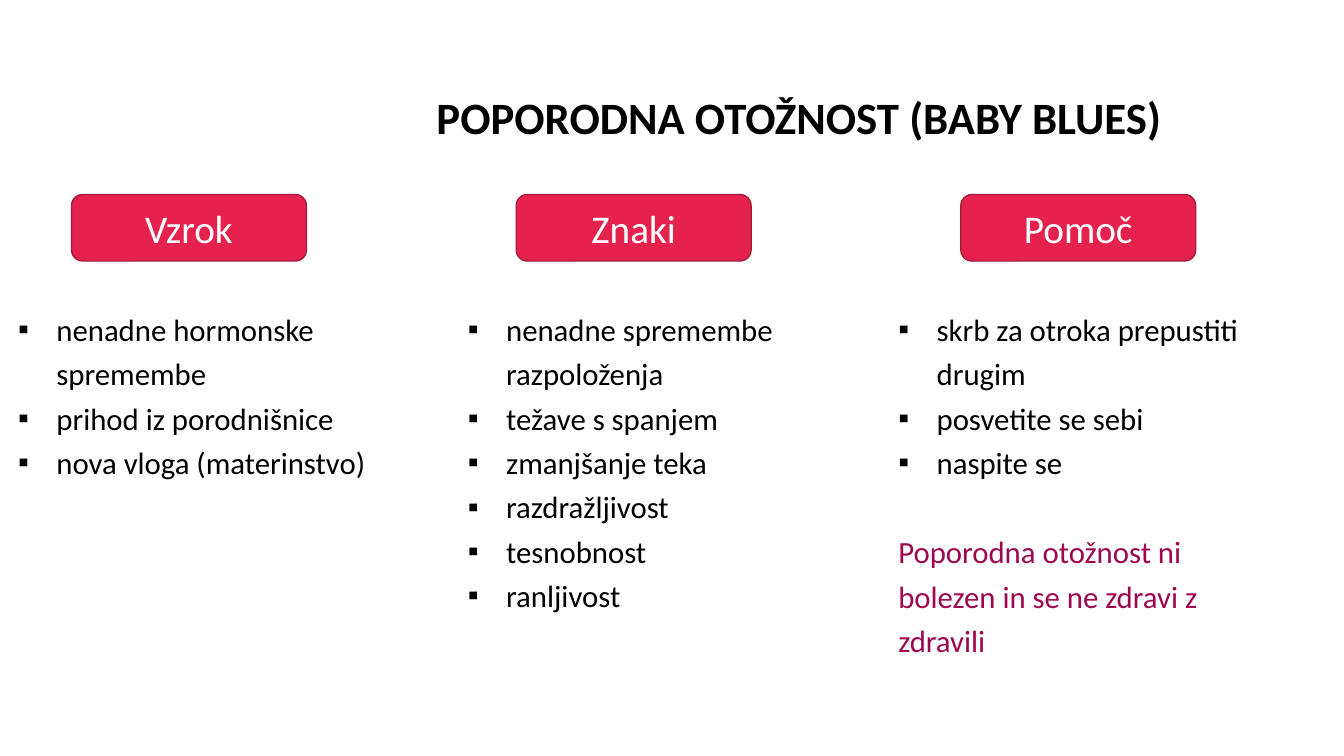
import pptx
import pptx.util
import pptx.dml.color
import pptx.enum.shapes
import pptx.enum.text
import pptx.oxml.ns
import lxml.etree

TITLE = "POPORODNA OTOŽNOST (BABY BLUES)"
COLUMNS = [
    ("Vzrok", 0.08, 3.97, 2.55,
     ["nenadne hormonske spremembe", "prihod iz porodnišnice", "nova vloga (materinstvo)"]),
    ("Znaki", 4.54, 3.78, 3.4,
     ["nenadne spremembe razpoloženja", "težave s spanjem", "zmanjšanje teka",
      "razdražljivost", "tesnobnost", "ranljivost"]),
    ("Pomoč", 8.81, 3.78, 3.62,
     ["skrb za otroka prepustiti drugim", "posvetite se sebi", "naspite se"]),
]
CLOSING = "Poporodna otožnost ni bolezen in se ne zdravi z zdravili"
LIST_SLOTS = (1, 2, 4)
UNUSED_SLOT = 3
LABEL_LEFT, LABEL_STEP, LABEL_TOP = 0.71, 4.41, 1.93
LABEL_WIDTH, LABEL_HEIGHT = 2.33, 0.66
LIST_TOP = 2.96
BULLET_INDENT = 0.38

ALIGN = pptx.enum.text.PP_ALIGN
ANCHOR = pptx.enum.text.MSO_ANCHOR
inches = pptx.util.Inches


def color(value):
    return pptx.dml.color.RGBColor.from_string(value)


def place(shape, left, top, width, height):
    shape.left, shape.top = inches(left), inches(top)
    shape.width, shape.height = inches(width), inches(height)


def prepare(shape, anchor):
    frame = shape.text_frame
    frame.word_wrap = True
    frame.auto_size = pptx.enum.text.MSO_AUTO_SIZE.NONE
    frame.vertical_anchor = anchor
    return frame


def set_bullet(para, bullet):
    indent = inches(BULLET_INDENT) if bullet else 0
    props = para._p.get_or_add_pPr()
    props.set("marL", str(indent))
    props.set("indent", str(-indent))
    qn = pptx.oxml.ns.qn
    if bullet:
        lxml.etree.SubElement(props, qn("a:buFont")).set("typeface", "Arial")
        lxml.etree.SubElement(props, qn("a:buChar")).set("char", bullet)
    else:
        lxml.etree.SubElement(props, qn("a:buNone"))


def write(frame, text, size=22, ink="000000", bold=False, align=ALIGN.LEFT,
          spacing=1.0, before=0, bullet=None):
    para = frame.paragraphs[0]
    if para.runs:
        para = frame.add_paragraph()
    set_bullet(para, bullet)
    para.alignment = align
    para.line_spacing = spacing
    para.space_before = pptx.util.Pt(before)
    para.space_after = pptx.util.Pt(0)
    span = para.add_run()
    span.text = text
    span.font.name = "Calibri"
    span.font.size = pptx.util.Pt(size)
    span.font.bold = bold
    span.font.color.rgb = color(ink)


def add_label(page, text, left):
    label = page.shapes.add_shape(
        pptx.enum.shapes.MSO_SHAPE.ROUNDED_RECTANGLE, inches(left), inches(LABEL_TOP),
        inches(LABEL_WIDTH), inches(LABEL_HEIGHT))
    label.shadow.inherit = False
    label.fill.solid()
    label.fill.fore_color.rgb = color("E5224E")
    label.line.color.rgb = color("A9193A")
    label.line.width = pptx.util.Pt(1)
    write(prepare(label, ANCHOR.MIDDLE), text, size=28, ink="FFFFFF", align=ALIGN.CENTER)


def main():
    deck = pptx.Presentation()
    deck.slide_width, deck.slide_height = inches(13.33), inches(7.5)
    page = deck.slides.add_slide(deck.slide_layouts[4])
    slots = {slot.placeholder_format.idx: slot for slot in page.placeholders}
    unused = slots[UNUSED_SLOT].element
    unused.getparent().remove(unused)

    title = page.shapes.title
    place(title, 2.48, 0.83, 9.14, 0.73)
    write(prepare(title, ANCHOR.MIDDLE), TITLE, size=32, bold=True,
          align=ALIGN.RIGHT, spacing=0.9)

    for number, (heading, left, width, height, items) in enumerate(COLUMNS):
        box = slots[LIST_SLOTS[number]]
        place(box, left, LIST_TOP, width, height)
        frame = prepare(box, ANCHOR.TOP)
        for item in items:
            write(frame, item, spacing=1.2, bullet="▪")
        add_label(page, heading, LABEL_LEFT + number * LABEL_STEP)
    write(frame, CLOSING, ink="9D074E", spacing=1.2, before=32)

    deck.save("out.pptx")


if __name__ == "__main__":
    main()
